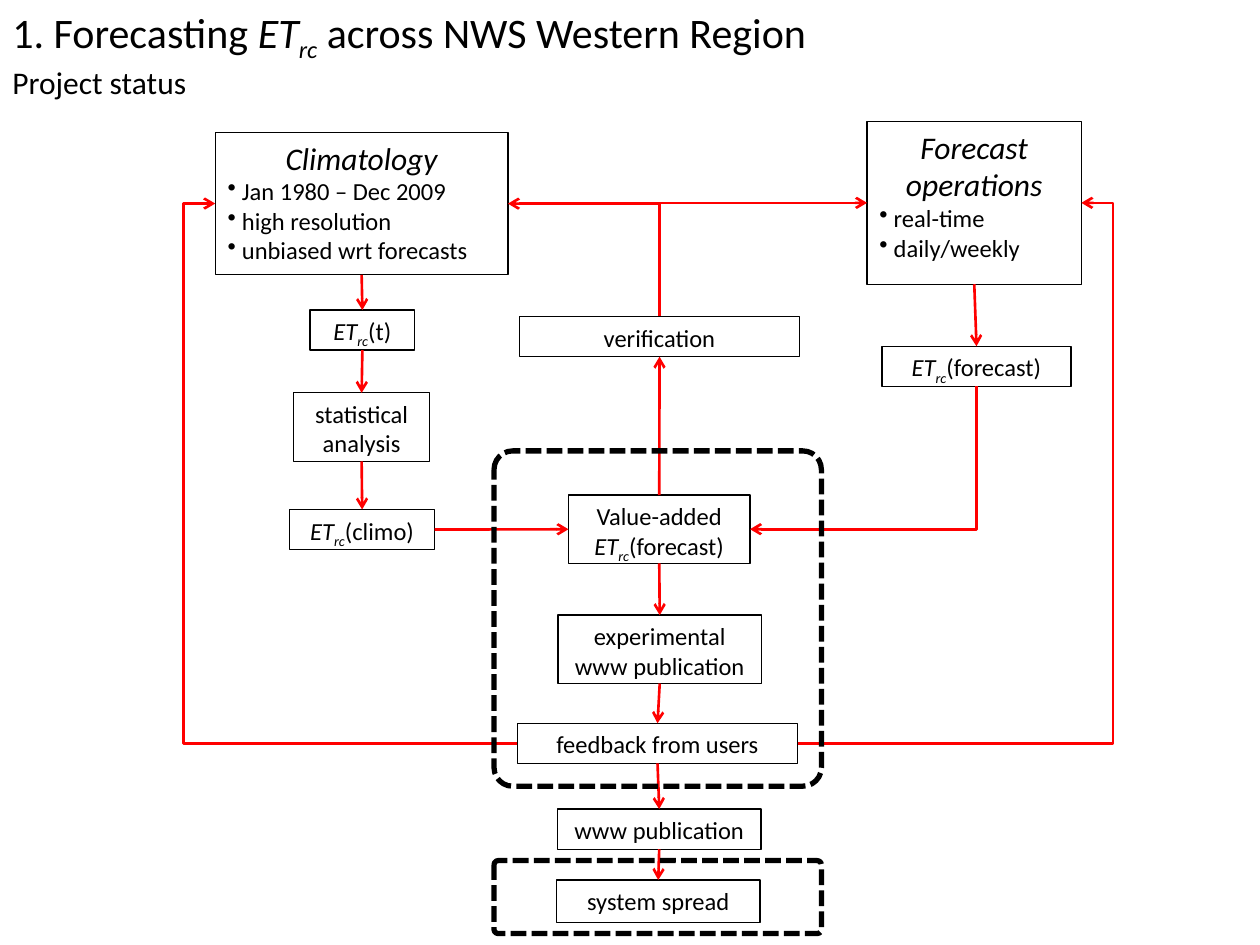
from lxml import etree
from pptx import Presentation
from pptx.dml.color import RGBColor
from pptx.enum.dml import MSO_LINE
from pptx.enum.shapes import MSO_CONNECTOR, MSO_SHAPE
from pptx.enum.text import MSO_ANCHOR, MSO_AUTO_SIZE, PP_ALIGN
from pptx.oxml.ns import qn
from pptx.util import Cm, Pt

COLORS = {"ink": "000000", "arrow": "FF0000"}
TOP, LEFT, BOTTOM, RIGHT = range(4)  # connection sites of a rectangle


def add_text(para, text, size=14, italic=False, align=PP_ALIGN.LEFT, bullet=False):
    """Fill a paragraph; the term ETrc is set in italics with a subscript."""
    para.alignment = align
    if bullet:
        etree.SubElement(para._p.get_or_add_pPr(), qn("a:buChar")).set("char", "•")
    before, term, after = text.partition("ETrc")
    pieces = [(before, italic, False), (term[:2], True, False),
              (term[2:], True, True), (after, italic, False)]
    for piece, slanted, lowered in pieces:
        if not piece:
            continue
        span = para.add_run()
        span.text = piece
        span.font.name = "Calibri"
        span.font.size = Pt(size)
        span.font.italic = slanted
        span.font.color.rgb = RGBColor.from_string(COLORS["ink"])
        if lowered:
            span.font._element.set("baseline", "-25000")


def add_outline(kind, left, top, width, height, weight):
    """Add an unfilled shape with a black outline."""
    box = page.shapes.add_shape(kind, Cm(left), Cm(top), Cm(width), Cm(height))
    box.shadow.inherit = False
    box.fill.background()
    box.line.color.rgb = RGBColor.from_string(COLORS["ink"])
    box.line.width = Pt(weight)
    return box


deck = Presentation()
deck.slide_width, deck.slide_height = Cm(25.4), Cm(19.05)
page = deck.slides.add_slide(deck.slide_layouts[6])

# Title and subtitle
title = page.shapes.add_textbox(0, 0, Cm(17.73), Cm(2.06)).text_frame
title.word_wrap = True
add_text(title.paragraphs[0], "1. Forecasting ETrc across NWS Western Region", size=24)
add_text(title.add_paragraph(), "Project status", size=18)

# Boxes: name, left, top, width, height, headings, other lines
steps = [
    ("operations", 17.48, 2.45, 4.32, 3.28, ["Forecast", "operations"],
     [" real-time", " daily/weekly"]),
    ("climatology", 4.34, 2.67, 5.9, 2.87, ["Climatology"],
     [" Jan 1980 – Dec 2009", " high resolution", " unbiased wrt forecasts"]),
    ("climo", 5.84, 10.27, 2.92, 0.81, [], ["ETrc(climo)"]),
    ("forecast", 17.78, 6.98, 3.81, 0.81, [], ["ETrc(forecast)"]),
    ("analysis", 5.92, 7.92, 2.74, 1.38, [], ["statistical analysis"]),
    ("series", 6.25, 6.25, 2.11, 0.81, [], ["ETrc(t)"]),
    ("value", 11.46, 9.98, 3.66, 1.38, [], ["Value-added ETrc(forecast)"]),
    ("experimental", 11.25, 12.4, 4.1, 1.38, [], ["experimental www publication"]),
    ("feedback", 10.43, 14.58, 5.65, 0.81, [], ["feedback from users"]),
    ("verification", 10.47, 6.38, 5.65, 0.81, [], ["verification"]),
    ("publication", 11.24, 16.31, 4.1, 0.81, [], ["www publication"]),
    ("spread", 11.22, 17.74, 4.1, 0.86, [], ["system spread"]),
]
boxes = {}
for name, left, top, width, height, headings, lines in steps:
    box = boxes[name] = add_outline(MSO_SHAPE.RECTANGLE, left, top, width, height, 0.75)
    frame = box.text_frame
    frame.word_wrap = True
    frame.auto_size = MSO_AUTO_SIZE.SHAPE_TO_FIT_TEXT
    frame.vertical_anchor = MSO_ANCHOR.TOP
    paras = [frame.paragraphs[0]]
    paras += [frame.add_paragraph() for _ in (headings + lines)[1:]]
    for para, heading in zip(paras, headings):
        add_text(para, heading, size=18, italic=True, align=PP_ALIGN.CENTER)
    listed = bool(headings)
    for para, line in zip(paras[len(headings):], lines):
        add_text(para, line, bullet=listed,
                 align=PP_ALIGN.LEFT if listed else PP_ALIGN.CENTER)

# Arrows: start, site, end, site, preset, arrowhead end, bend position
STRAIGHT, CORNER, LOOP = "line", "bentConnector2", "bentConnector3"
downward = [("operations", "forecast"), ("climatology", "series"),
            ("series", "analysis"), ("analysis", "climo"),
            ("value", "experimental"), ("experimental", "feedback"),
            ("feedback", "publication"), ("publication", "spread")]
links = [(start, BOTTOM, end, TOP, STRAIGHT, "tailEnd", None) for start, end in downward]
links += [
    ("climo", RIGHT, "value", LEFT, STRAIGHT, "tailEnd", None),
    ("value", TOP, "verification", BOTTOM, STRAIGHT, "tailEnd", None),
    # Corners run from the arrowhead, sideways first
    ("value", RIGHT, "forecast", BOTTOM, CORNER, "headEnd", None),
    ("climatology", RIGHT, "verification", TOP, CORNER, "headEnd", None),
    ("operations", LEFT, "verification", TOP, CORNER, "headEnd", None),
    ("feedback", RIGHT, "operations", RIGHT, LOOP, "tailEnd", 111100),
    ("feedback", LEFT, "climatology", LEFT, LOOP, "tailEnd", 110400),
]
for start, start_site, end, end_site, preset, tip, bend in links:
    kind = MSO_CONNECTOR.STRAIGHT if preset == STRAIGHT else MSO_CONNECTOR.ELBOW
    arrow = page.shapes.add_connector(kind, 0, 0, 0, 0)
    arrow.begin_connect(boxes[start], start_site)
    arrow.end_connect(boxes[end], end_site)
    arrow.line.color.rgb = RGBColor.from_string(COLORS["arrow"])
    arrow.line.width = Pt(1.5)
    properties = arrow._element.spPr
    geometry = properties.find(qn("a:prstGeom"))
    geometry.set("prst", preset)
    if bend:
        guide = etree.SubElement(geometry.find(qn("a:avLst")), qn("a:gd"))
        guide.set("name", "adj1")
        guide.set("fmla", f"val {bend}")
    etree.SubElement(properties.find(qn("a:ln")), qn(f"a:{tip}")).set("type", "arrow")
    etree.SubElement(properties, qn("a:effectLst"))

# Dashed frames around the stages
for top, height in [(9.09, 6.76), (17.35, 1.47)]:
    stage = add_outline(MSO_SHAPE.ROUNDED_RECTANGLE, 9.96, top, 6.6, height, 3)
    stage.adjustments[0] = 0.057
    stage.line.dash_style = MSO_LINE.SQUARE_DOT

deck.save("out.pptx")
